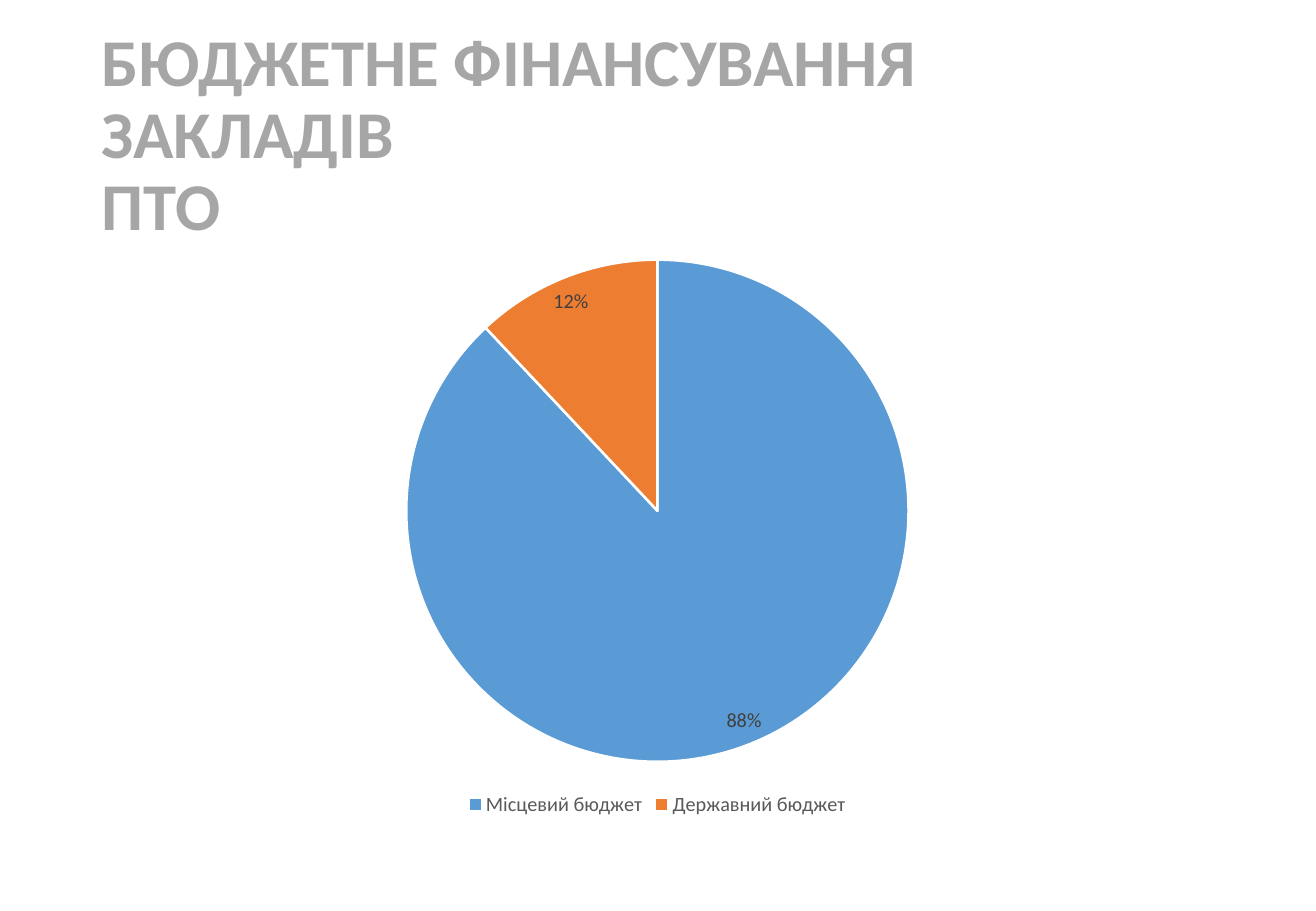
import pptx
import pptx.chart.data
import pptx.dml.color
import pptx.enum.chart
import pptx.enum.text
import pptx.util

EMU_PER_PX = 9144
COLOURS = {
    "title": "A6A6A6",
    "local": "5B9BD5",
    "state": "ED7D31",
    "border": "FFFFFF",
    "label": "404040",
    "legend": "595959",
    "chart": "000000",
}


def px(length):
    return pptx.util.Emu(length * EMU_PER_PX)


class BudgetSlide:
    """Draws styled elements on one slide."""

    def __init__(self, presentation):
        self.font_name = "Calibri"
        self.slide = presentation.slides.add_slide(presentation.slide_layouts[6])

    def colour(self, name):
        return pptx.dml.color.RGBColor.from_string(COLOURS[name])

    def style(self, font, size, colour, bold=False):
        font.name = self.font_name
        font.size = pptx.util.Pt(size)
        font.bold = bold
        font.color.rgb = self.colour(colour)

    def title(self, text, box):
        frame = self.slide.shapes.add_textbox(*map(px, box)).text_frame
        frame.word_wrap = True
        frame.vertical_anchor = pptx.enum.text.MSO_ANCHOR.MIDDLE
        paragraph = frame.paragraphs[0]
        paragraph.text = text
        paragraph.line_spacing = 0.9
        self.style(paragraph.font, 39.6, "title", bold=True)

    def pie(self, shares, box):
        budget = pptx.chart.data.CategoryChartData()
        budget.categories = [source for source, _, _ in shares]
        budget.add_series("Series 1", [share for _, share, _ in shares])
        chart = self.slide.shapes.add_chart(
            pptx.enum.chart.XL_CHART_TYPE.PIE, *map(px, box), budget
        ).chart
        self.style(chart.font, 10, "chart")
        chart.has_title = False
        chart.has_legend = True
        chart.legend.position = pptx.enum.chart.XL_LEGEND_POSITION.BOTTOM
        chart.legend.include_in_layout = False
        self.style(chart.legend.font, 12, "legend")

        plot = chart.plots[0]
        plot.vary_by_categories = True
        for index, (_, _, colour) in enumerate(shares):
            slice_format = plot.series[0].points[index].format
            slice_format.fill.solid()
            slice_format.fill.fore_color.rgb = self.colour(colour)
            slice_format.line.color.rgb = self.colour("border")
            slice_format.line.width = pptx.util.Pt(1.5)

        labels = plot.series[0].data_labels
        labels.show_value = False
        labels.show_percentage = True
        labels.number_format = "0%"
        labels.number_format_is_linked = False
        labels.position = pptx.enum.chart.XL_LABEL_POSITION.BEST_FIT
        self.style(labels.font, 12, "label")


def main():
    presentation = pptx.Presentation()
    presentation.slide_width = px(1083)
    presentation.slide_height = px(750)
    financing = BudgetSlide(presentation)
    financing.title("БЮДЖЕТНЕ ФІНАНСУВАННЯ ЗАКЛАДІВ\vПТО", (74, 40, 934, 145))
    financing.pie(
        [("Місцевий бюджет", 88, "local"), ("Державний бюджет", 12, "state")],
        (74, 200, 934, 476),
    )
    presentation.save("out.pptx")


if __name__ == "__main__":
    main()
